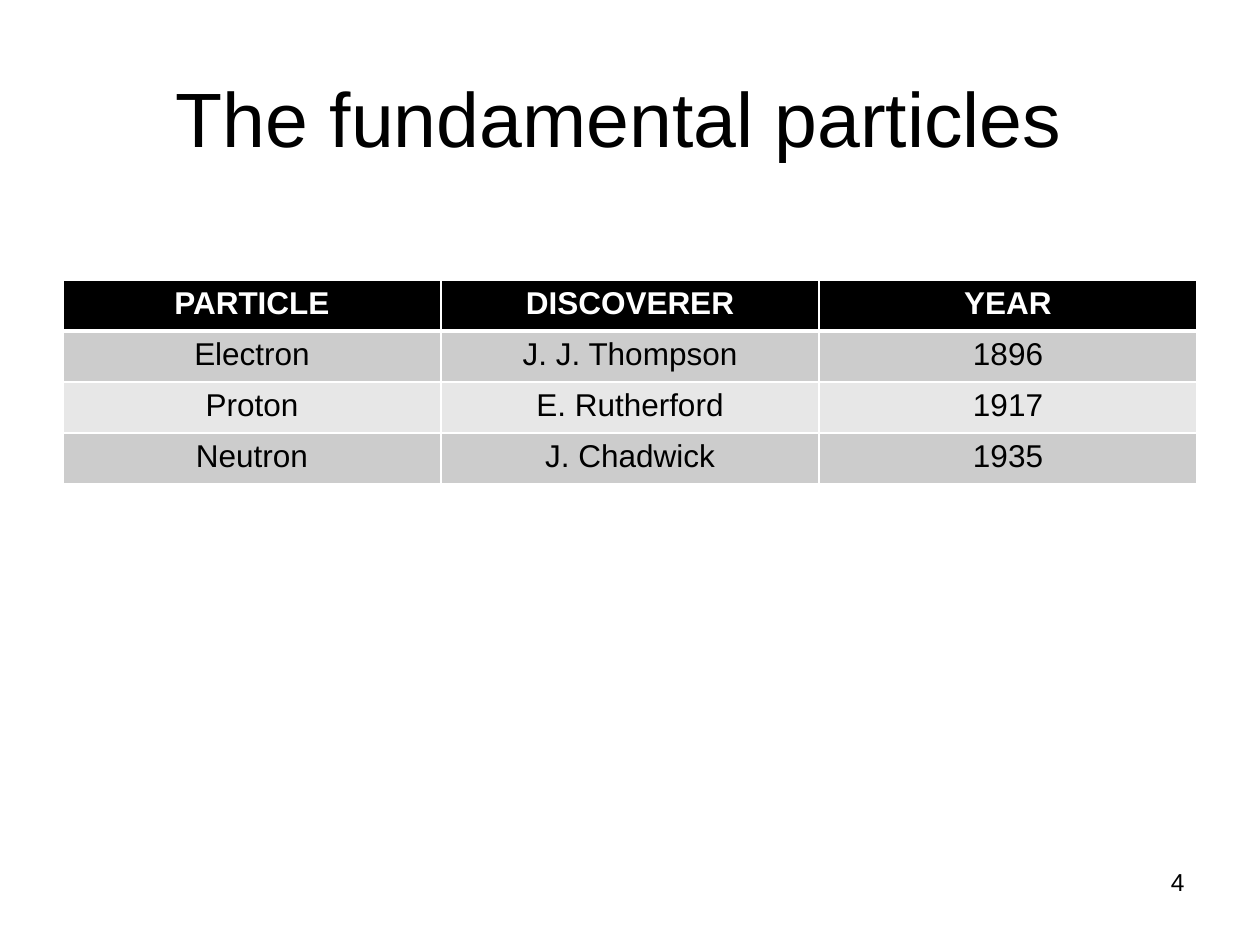
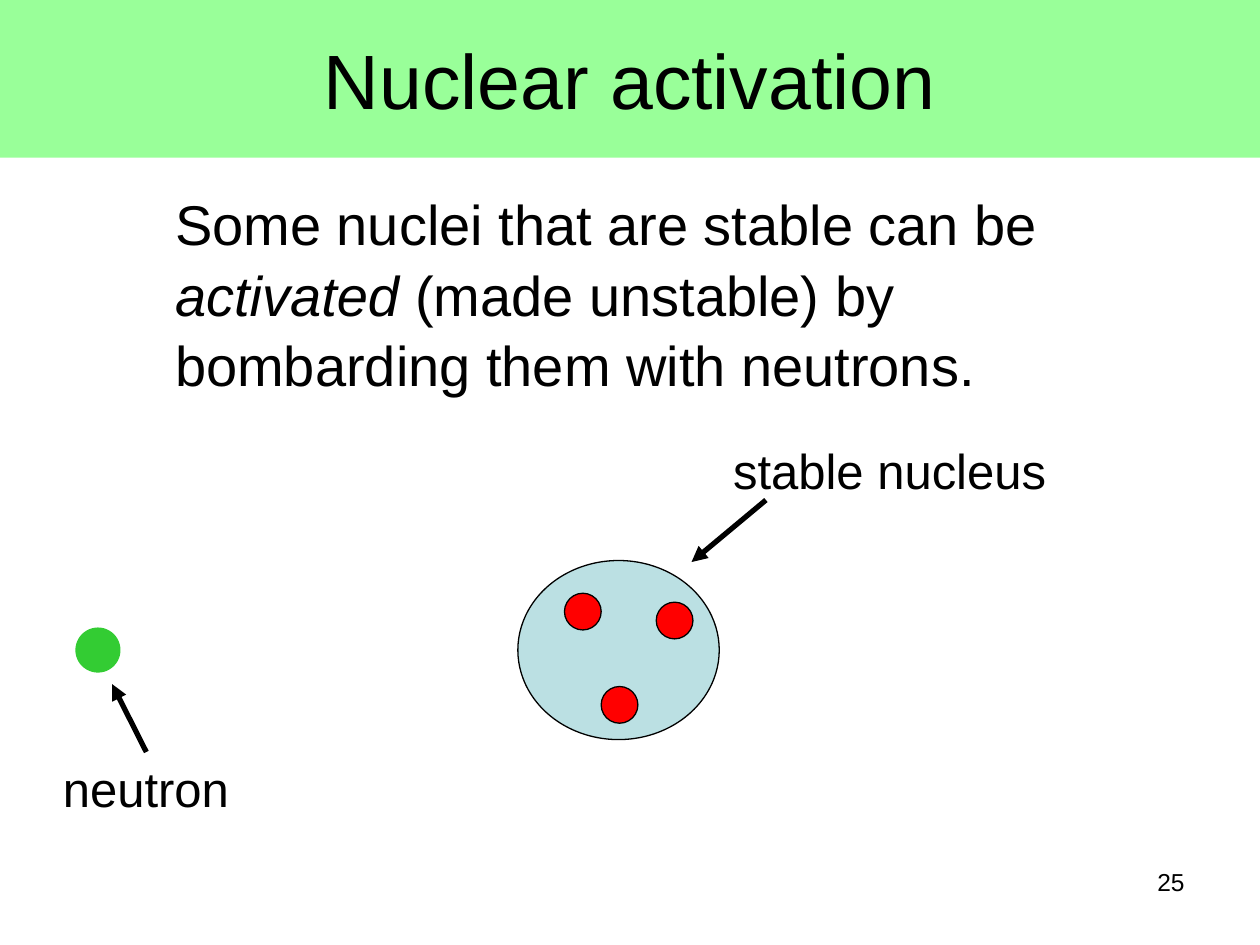
from lxml import etree
from pptx import Presentation
from pptx.dml.color import RGBColor
from pptx.enum.shapes import MSO_CONNECTOR, MSO_SHAPE
from pptx.enum.text import MSO_ANCHOR, PP_ALIGN
from pptx.oxml.ns import qn
from pptx.util import Cm, Pt

LEFT, CENTER, RIGHT = PP_ALIGN.LEFT, PP_ALIGN.CENTER, PP_ALIGN.RIGHT
MIDDLE = MSO_ANCHOR.MIDDLE
OVAL, STRAIGHT = MSO_SHAPE.OVAL, MSO_CONNECTOR.STRAIGHT

FONT = "Arial"
COLORS = {
    "black": "000000", "white": "FFFFFF", "band": "99FF99",
    "odd": "CCCCCC", "even": "E7E7E7",
    "nucleus": "BBE0E3", "proton": "FF0000", "neutron": "33CC33",
}
NUMBER_BOX = (18.21, 17.35, 5.92, 1.32)

PARTICLES = {
    "title": "The fundamental particles ",
    "title_box": (1.27, 0.76, 22.86, 3.18),
    "number": "4",
    "rows": [
        ("PARTICLE", "DISCOVERER", "YEAR"),
        ("Electron", "J. J. Thompson", "1896"),
        ("Proton", "E. Rutherford", "1917"),
        ("Neutron", "J. Chadwick", "1935"),
    ],
}
TABLE_LEFT, TABLE_TOP, COL_WIDTH, ROW_HEIGHT = 1.27, 5.64, 7.62, 1.03

ACTIVATION = {
    "title": "Nuclear activation",
    "title_box": (0, 0, 25.4, 3.18),
    "number": "25",
    "body_box": (3.28, 3.63, 18.42, 4.39),
    "body": [
        [("Some nuclei that are stable can be", False)],
        [("activated ", True), ("(made unstable) by", False)],
        [("bombarding them with neutrons.", False)],
    ],
    "ovals": [
        ((10.44, 11.3, 4.06, 3.61), "nucleus", True),
        ((13.23, 12.14, 0.74, 0.74), "proton", True),
        ((12.12, 13.84, 0.74, 0.74), "proton", True),
        ((11.38, 11.96, 0.74, 0.74), "proton", True),
        ((1.52, 12.65, 0.91, 0.91), "neutron", False),
    ],
    "labels": [
        ("stable nucleus", (14.53, 8.76, 6.83, 1.45)),
        ("neutron", (1.02, 15.16, 3.86, 1.45)),
    ],
    "arrows": [
        (15.44, 10.08, 13.94, 11.33),
        (2.95, 15.16, 2.26, 13.79),
    ],
}


def rgb(name):
    return RGBColor.from_string(COLORS[name])


def cms(values):
    return [Cm(v) for v in values]


def add_run(p, text, size, color="black", bold=False, italic=False):
    r = p.add_run()
    r.text = text
    r.font.name, r.font.size = FONT, Pt(size)
    r.font.bold, r.font.italic = bold, italic
    r.font.color.rgb = rgb(color)


def add_text(slide, box, lines, size, align=LEFT, wrap=True, spacing=None):
    tf = slide.shapes.add_textbox(*cms(box)).text_frame
    tf.word_wrap = wrap
    p = tf.paragraphs[0]
    p.alignment, p.line_spacing = align, spacing
    for i, line in enumerate(lines):
        if i:
            p.add_line_break()
        for text, italic in line:
            add_run(p, text, size, italic=italic)


def add_slide(prs, content, band=None):
    slide = prs.slides.add_slide(prs.slide_layouts[5])
    title = slide.shapes.title
    title.left, title.top, title.width, title.height = cms(content["title_box"])
    if band:
        title.fill.solid()
        title.fill.fore_color.rgb = rgb(band)
    tf = title.text_frame
    tf.vertical_anchor = MIDDLE
    p = tf.paragraphs[0]
    p.alignment = CENTER
    add_run(p, content["title"], 44)
    add_text(slide, NUMBER_BOX, [[(content["number"], False)]], 14, RIGHT)
    return slide


def set_borders(cell, widths):
    tc_pr = cell._tc.get_or_add_tcPr()
    for i, (side, width) in enumerate(widths.items()):
        ln = etree.Element(qn(f"a:ln{side}"), w=str(Pt(width)))
        fill = etree.SubElement(ln, qn("a:solidFill"))
        etree.SubElement(fill, qn("a:srgbClr"), val=COLORS["white"])
        tc_pr.insert(i, ln)


def add_table(slide, rows):
    n_rows, n_cols = len(rows), len(rows[0])
    box = (TABLE_LEFT, TABLE_TOP, COL_WIDTH * n_cols, ROW_HEIGHT * n_rows)
    table = slide.shapes.add_table(n_rows, n_cols, *cms(box)).table
    for i, row in enumerate(rows):
        table.rows[i].height = Cm(ROW_HEIGHT)
        header = i == 0
        fill = "black" if header else "odd" if i % 2 else "even"
        widths = {"L": 1, "R": 1, "T": 3 if i == 1 else 1, "B": 3 if header else 1}
        for j, text in enumerate(row):
            cell = table.cell(i, j)
            cell.fill.solid()
            cell.fill.fore_color.rgb = rgb(fill)
            set_borders(cell, widths)
            p = cell.text_frame.paragraphs[0]
            p.alignment = CENTER
            add_run(p, text, 18, "white" if header else "black", bold=header)


def add_oval(slide, box, color, outlined):
    sp = slide.shapes.add_shape(OVAL, *cms(box))
    sp.shadow.inherit = False
    sp.fill.solid()
    sp.fill.fore_color.rgb = rgb(color)
    if outlined:
        sp.line.color.rgb = rgb("black")
        sp.line.width = Pt(0.75)
    else:
        sp.line.fill.background()


def add_arrow(slide, ends):
    line = slide.shapes.add_connector(STRAIGHT, *cms(ends))
    line.line.color.rgb = rgb("black")
    line.line.width = Pt(3)
    etree.SubElement(line.line._get_or_add_ln(), qn("a:tailEnd"), type="triangle")
    etree.SubElement(line._element.spPr, qn("a:effectLst"))


def main():
    prs = Presentation()
    prs.slide_width, prs.slide_height = Cm(25.4), Cm(19.05)

    slide = add_slide(prs, PARTICLES)
    add_table(slide, PARTICLES["rows"])

    slide = add_slide(prs, ACTIVATION, band="band")
    add_text(slide, ACTIVATION["body_box"], ACTIVATION["body"], 32, spacing=1.05)
    for oval in ACTIVATION["ovals"]:
        add_oval(slide, *oval)
    for text, box in ACTIVATION["labels"]:
        add_text(slide, box, [[(text, False)]], 28, wrap=False)
    for ends in ACTIVATION["arrows"]:
        add_arrow(slide, ends)

    prs.save("out.pptx")


if __name__ == "__main__":
    main()
